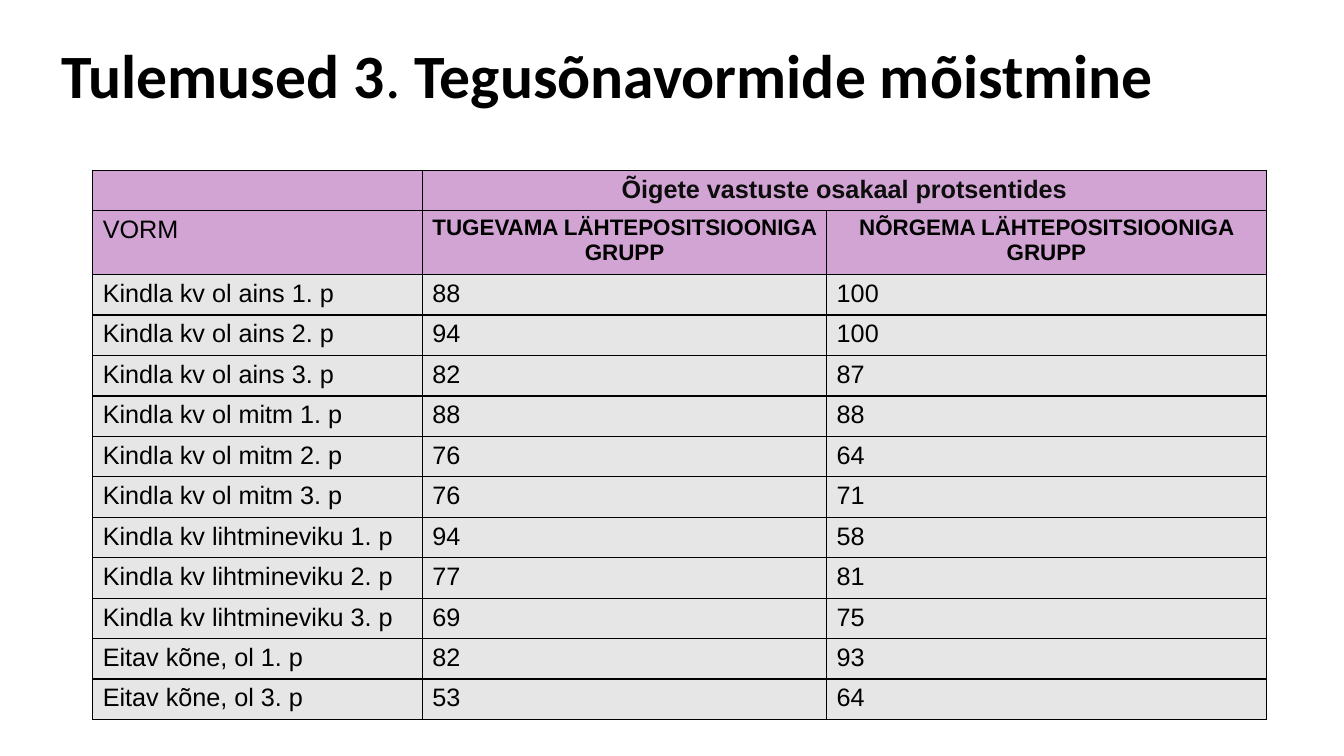
from dataclasses import dataclass

from lxml.etree import SubElement
from pptx import Presentation
from pptx.dml.color import RGBColor
from pptx.enum.text import MSO_ANCHOR, PP_ALIGN
from pptx.oxml.ns import qn
from pptx.util import Emu, Inches, Pt

BLACK = RGBColor(0x00, 0x00, 0x00)
SOFT_BLACK = RGBColor(0x0D, 0x0D, 0x0D)
LILAC = RGBColor(0xD2, 0xA4, 0xD4)
GREY = RGBColor(0xE7, 0xE6, 0xE6)

SLIDE_WIDTH, SLIDE_HEIGHT = Inches(13.33), Inches(7.5)
BORDER_WIDTH = Pt(0.96)

# Shares of the slide's size, in percent
COLUMN_SHARES = (24.53, 30.08, 32.71)
ROW_SHARE, GROUP_ROW_SHARE = 5.35, 8.4


@dataclass(frozen=True)
class VerbForm:
    name: str
    stronger: int
    weaker: int


VERB_FORMS = (
    VerbForm("Kindla kv ol ains 1. p", 88, 100),
    VerbForm("Kindla kv ol ains 2. p", 94, 100),
    VerbForm("Kindla kv ol ains 3. p", 82, 87),
    VerbForm("Kindla kv ol mitm 1. p", 88, 88),
    VerbForm("Kindla kv ol mitm 2. p", 76, 64),
    VerbForm("Kindla kv ol mitm 3. p", 76, 71),
    VerbForm("Kindla kv lihtmineviku 1. p", 94, 58),
    VerbForm("Kindla kv lihtmineviku 2. p", 77, 81),
    VerbForm("Kindla kv lihtmineviku 3. p", 69, 75),
    VerbForm("Eitav kõne, ol 1. p", 82, 93),
    VerbForm("Eitav kõne, ol 3. p", 53, 64),
)


def across(percent: float) -> Emu:
    return Emu(round(SLIDE_WIDTH * percent / 100))


def down(percent: float) -> Emu:
    return Emu(round(SLIDE_HEIGHT * percent / 100))


def add_text(paragraph, text: str, *, size: float = 18, font: str = "Arial",
             color: RGBColor = BLACK, bold: bool = False,
             align: PP_ALIGN = PP_ALIGN.LEFT) -> None:
    paragraph.alignment = align
    run = paragraph.add_run()
    run.text = text
    run.font.size = Pt(size)
    run.font.name = font
    run.font.bold = bold
    run.font.color.rgb = color


def style_cell(cell, fill: RGBColor) -> None:
    properties = cell._tc.get_or_add_tcPr()
    for side in ("a:lnL", "a:lnR", "a:lnT", "a:lnB"):
        line = SubElement(properties, qn(side), w=str(int(BORDER_WIDTH)))
        solid = SubElement(line, qn("a:solidFill"))
        SubElement(solid, qn("a:srgbClr"), val=str(BLACK))
    cell.fill.solid()
    cell.fill.fore_color.rgb = fill


def add_title(slide) -> None:
    box = slide.shapes.add_textbox(across(3.83), down(5.33), across(89.35), down(19.33))
    frame = box.text_frame
    frame.word_wrap = True
    frame.vertical_anchor = MSO_ANCHOR.TOP
    paragraph = frame.paragraphs[0]
    paragraph.line_spacing = 0.9
    for text, bold in (("Tulemused 3", True), (". ", False),
                       ("Tegusõnavormide mõistmine", True)):
        add_text(paragraph, text, size=44, font="Calibri", bold=bold)


def add_results(slide) -> None:
    row_shares = [ROW_SHARE, GROUP_ROW_SHARE] + [ROW_SHARE] * len(VERB_FORMS)
    table = slide.shapes.add_table(
        len(row_shares), len(COLUMN_SHARES), across(6.9), down(22.53),
        across(sum(COLUMN_SHARES)), down(sum(row_shares))).table
    for column, share in zip(table.columns, COLUMN_SHARES):
        column.width = across(share)
    for row, share in zip(table.rows, row_shares):
        row.height = down(share)

    # Fills and borders
    for row_index, row in enumerate(table.rows):
        for cell in row.cells:
            style_cell(cell, LILAC if row_index < 2 else GREY)

    def write(row: int, column: int, text: str, **text_format) -> None:
        add_text(table.cell(row, column).text_frame.paragraphs[0], text, **text_format)

    # Header rows
    table.cell(0, 1).merge(table.cell(0, 2))
    write(0, 1, "Õigete vastuste osakaal protsentides",
          color=SOFT_BLACK, bold=True, align=PP_ALIGN.CENTER)
    write(1, 0, "VORM")
    for column, group in enumerate(("TUGEVAMA", "NÕRGEMA"), start=1):
        write(1, column, f"{group} LÄHTEPOSITSIOONIGA GRUPP",
              size=16, bold=True, align=PP_ALIGN.CENTER)

    # Results by verb form
    for row, form in enumerate(VERB_FORMS, start=2):
        for column, value in enumerate((form.name, form.stronger, form.weaker)):
            write(row, column, str(value))


def main() -> None:
    presentation = Presentation()
    presentation.slide_width = SLIDE_WIDTH
    presentation.slide_height = SLIDE_HEIGHT
    slide = presentation.slides.add_slide(presentation.slide_layouts[6])
    add_title(slide)
    add_results(slide)
    presentation.save("out.pptx")


if __name__ == "__main__":
    main()
